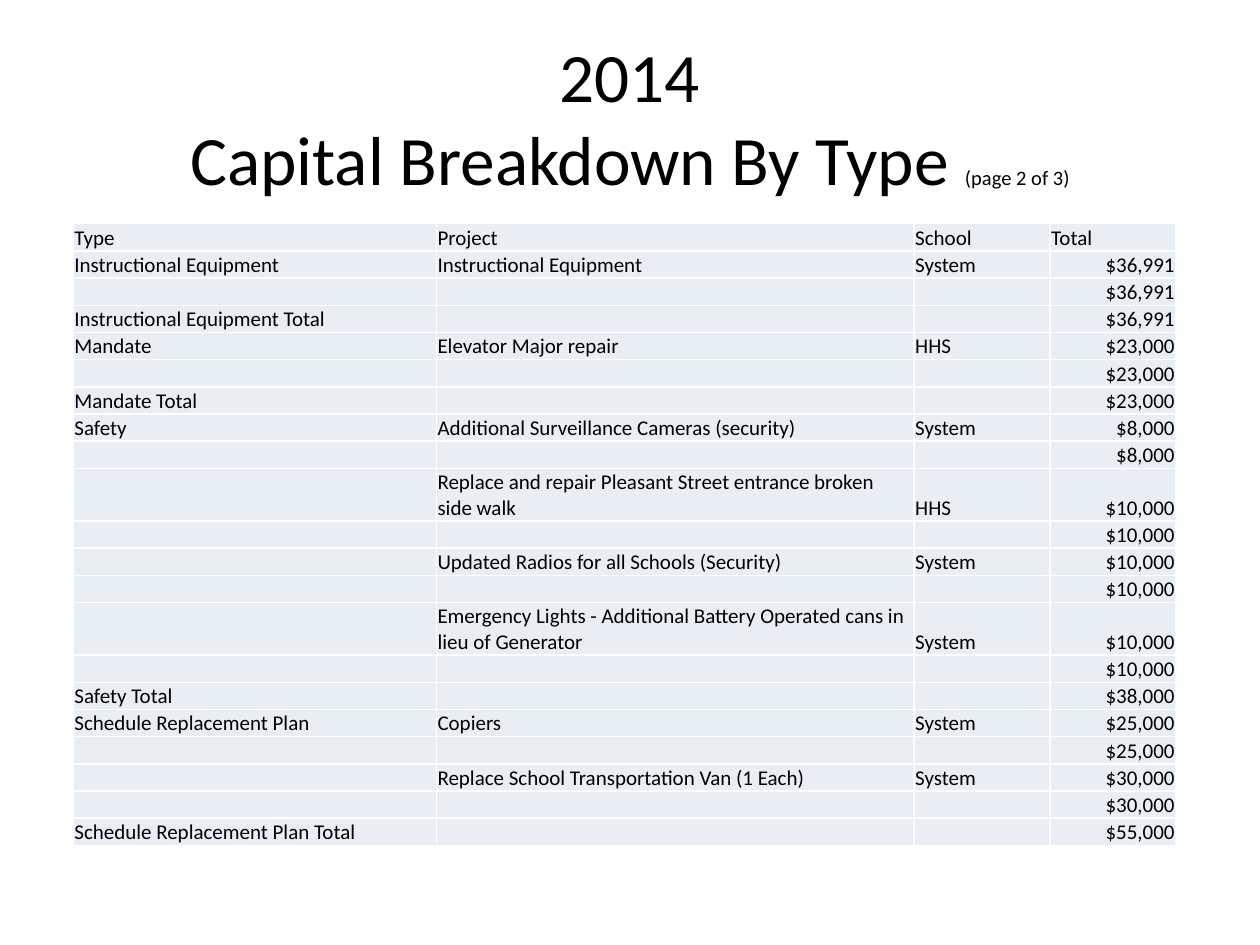
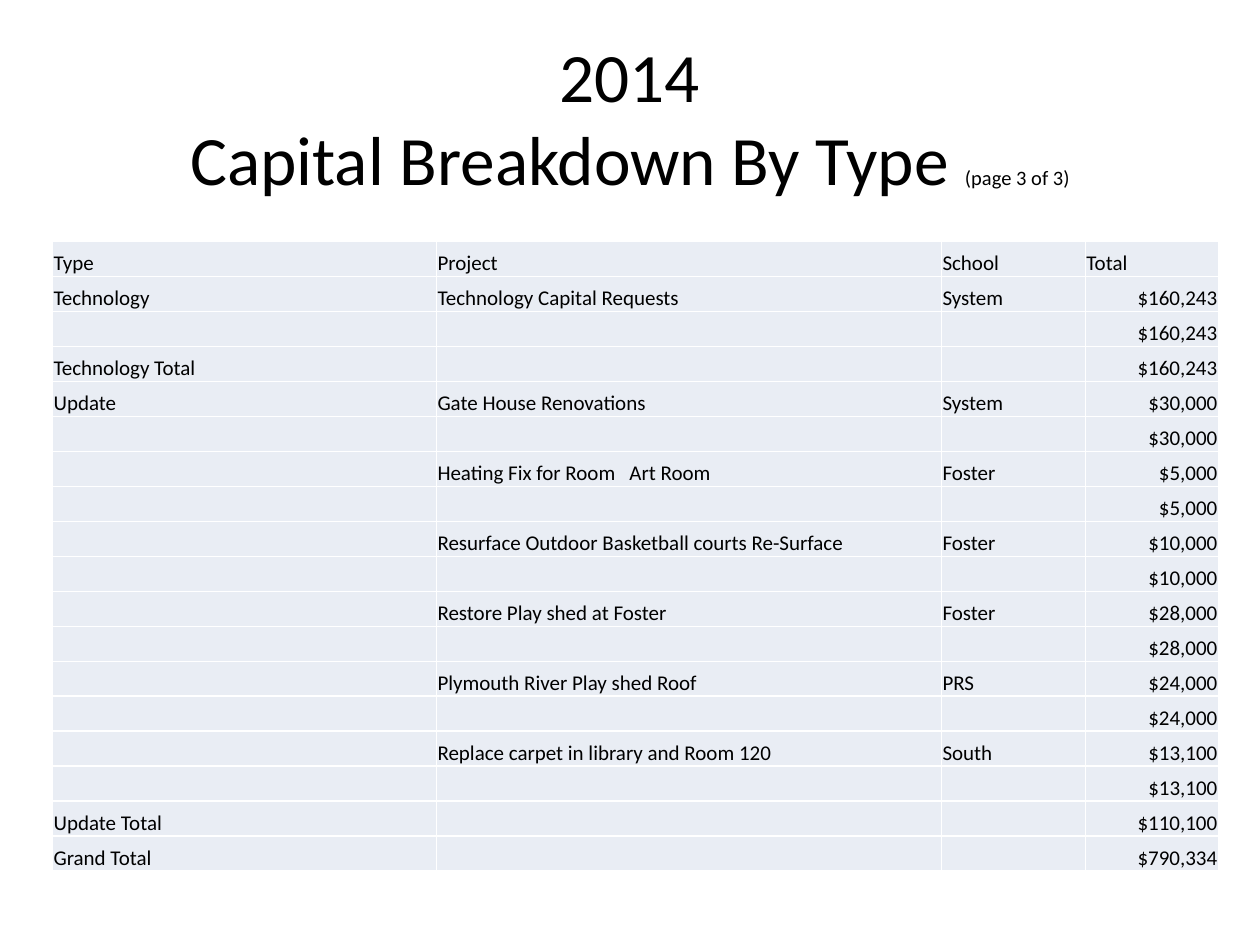
"""Build two slides of the 2014 capital breakdown by type."""
from dataclasses import dataclass
from typing import Any

from lxml import etree
from pptx import Presentation
from pptx import util as u
from pptx.dml import color
from pptx.enum import text
from pptx.oxml import ns

COLOURS = {"ink": "000000", "cell": "E9EDF4", "border": "FFFFFF"}
FONT = "Calibri"
HEADERS = ("Type", "Project", "School", "Total")
CELL_SIZE = 12
WRAP_AT = 50
TALL_ROW = 1.06
CELL_FORMAT = {
    "margin_left": u.Cm(0.02), "margin_right": u.Cm(0.02),
    "margin_top": u.Cm(0.02), "margin_bottom": u.Cm(0),
    "vertical_anchor": text.MSO_ANCHOR.BOTTOM,
}
TITLE_FORMAT = {"word_wrap": True, "vertical_anchor": text.MSO_ANCHOR.MIDDLE}
TABLE_FORMAT = {"first_row": False, "horz_banding": False}

Row = tuple[str, str, str, str]


@dataclass(frozen=True)
class Project:
    name: str
    school: str
    cost: int


@dataclass(frozen=True)
class Group:
    kind: str
    projects: tuple[Project, ...]


@dataclass(frozen=True)
class Page:
    number: int
    left: float
    top: float
    height: float
    widths: tuple[float, ...]
    groups: tuple[Group, ...]
    grand_total: int = 0


PAGES = (
    Page(2, 1.48, 4.51, 12.54, (7.32, 9.63, 2.74, 2.53), (
        Group("Instructional Equipment", (
            Project("Instructional Equipment", "System", 36991),)),
        Group("Mandate", (Project("Elevator Major repair", "HHS", 23000),)),
        Group("Safety", (
            Project("Additional Surveillance Cameras (security)", "System", 8000),
            Project("Replace and repair Pleasant Street entrance broken side walk",
                    "HHS", 10000),
            Project("Updated Radios for all Schools (Security)", "System", 10000),
            Project("Emergency Lights - Additional Battery Operated cans in lieu of Generator",
                    "System", 10000))),
        Group("Schedule Replacement Plan", (
            Project("Copiers", "System", 25000),
            Project("Replace School Transportation Van (1 Each)", "System", 30000))),
    )),
    Page(3, 1.06, 4.87, 12.69, (7.74, 10.18, 2.9, 2.68), (
        Group("Technology", (
            Project("Technology Capital Requests", "System", 160243),)),
        Group("Update", (
            Project("Gate House Renovations", "System", 30000),
            Project("Heating Fix for Room   Art Room", "Foster", 5000),
            Project("Resurface Outdoor Basketball courts Re-Surface", "Foster", 10000),
            Project("Restore Play shed at Foster", "Foster", 28000),
            Project("Plymouth River Play shed Roof", "PRS", 24000),
            Project("Replace carpet in library and Room 120", "South", 13100))),
    ), 790334),
)


def apply(target: Any, values: dict[str, Any]) -> None:
    for name, value in values.items():
        setattr(target, name, value)


def rgb(name: str) -> color.RGBColor:
    return color.RGBColor.from_string(COLOURS[name])


def add_run(p: Any, words: str, size: float) -> None:
    r = p.add_run()
    r.text = words
    apply(r.font, {"name": FONT, "size": u.Pt(size)})
    r.font.color.rgb = rgb("ink")


def add_title(s: Any, number: int) -> None:
    sp = s.shapes.add_textbox(u.Cm(1.27), u.Cm(0.76), u.Cm(22.86), u.Cm(3.18))
    tf = sp.text_frame
    apply(tf, TITLE_FORMAT)
    p = tf.paragraphs[0]
    p.alignment = text.PP_ALIGN.CENTER
    add_run(p, "2014", 39.6)
    p.add_line_break()
    add_run(p, "Capital Breakdown By Type ", 39.6)
    add_run(p, f"(page {number} of 3)", 11.7)


def table_rows(page: Page) -> list[Row]:
    rows: list[Row] = [HEADERS]
    for group in page.groups:
        for i, project in enumerate(group.projects):
            cost = f"${project.cost:,}"
            kind = "" if i else group.kind
            rows += [(kind, project.name, project.school, cost), ("", "", "", cost)]
        total = sum(project.cost for project in group.projects)
        rows.append((f"{group.kind} Total", "", "", f"${total:,}"))
    if page.grand_total:
        rows.append(("Grand Total", "", "", f"${page.grand_total:,}"))
    return rows


def add_borders(cell: Any) -> None:
    tc_pr = cell._tc.get_or_add_tcPr()
    for side in ("lnL", "lnR", "lnT", "lnB"):
        line = etree.SubElement(tc_pr, ns.qn(f"a:{side}"), w=str(u.Pt(1)))
        fill = etree.SubElement(line, ns.qn("a:solidFill"))
        etree.SubElement(fill, ns.qn("a:srgbClr"), val=COLOURS["border"])


def fill_cell(cell: Any, words: str) -> None:
    apply(cell, CELL_FORMAT)
    add_borders(cell)
    cell.fill.solid()
    cell.fill.fore_color.rgb = rgb("cell")
    p = cell.text_frame.paragraphs[0]
    if words.startswith("$"):
        p.alignment = text.PP_ALIGN.RIGHT
    if words:
        add_run(p, words, CELL_SIZE)
    else:
        etree.SubElement(p._p, ns.qn("a:endParaRPr"), sz=str(CELL_SIZE * 100))


def add_breakdown(s: Any, page: Page) -> None:
    rows = table_rows(page)
    tall = [len(row[1]) > WRAP_AT for row in rows]
    normal = (page.height - TALL_ROW * sum(tall)) / (len(rows) - sum(tall))
    table = s.shapes.add_table(
        len(rows), len(HEADERS), u.Cm(page.left), u.Cm(page.top),
        u.Cm(sum(page.widths)), u.Cm(page.height)).table
    apply(table, TABLE_FORMAT)
    for column, width in zip(table.columns, page.widths):
        column.width = u.Cm(width)
    for row, values, is_tall in zip(table.rows, rows, tall):
        row.height = u.Cm(TALL_ROW if is_tall else normal)
        for cell, words in zip(row.cells, values):
            fill_cell(cell, words)


def main() -> None:
    prs = Presentation()
    apply(prs, {"slide_width": u.Cm(25.4), "slide_height": u.Cm(19.05)})
    for page in PAGES:
        s = prs.slides.add_slide(prs.slide_layouts[6])
        add_title(s, page.number)
        add_breakdown(s, page)
    prs.save("out.pptx")


if __name__ == "__main__":
    main()
